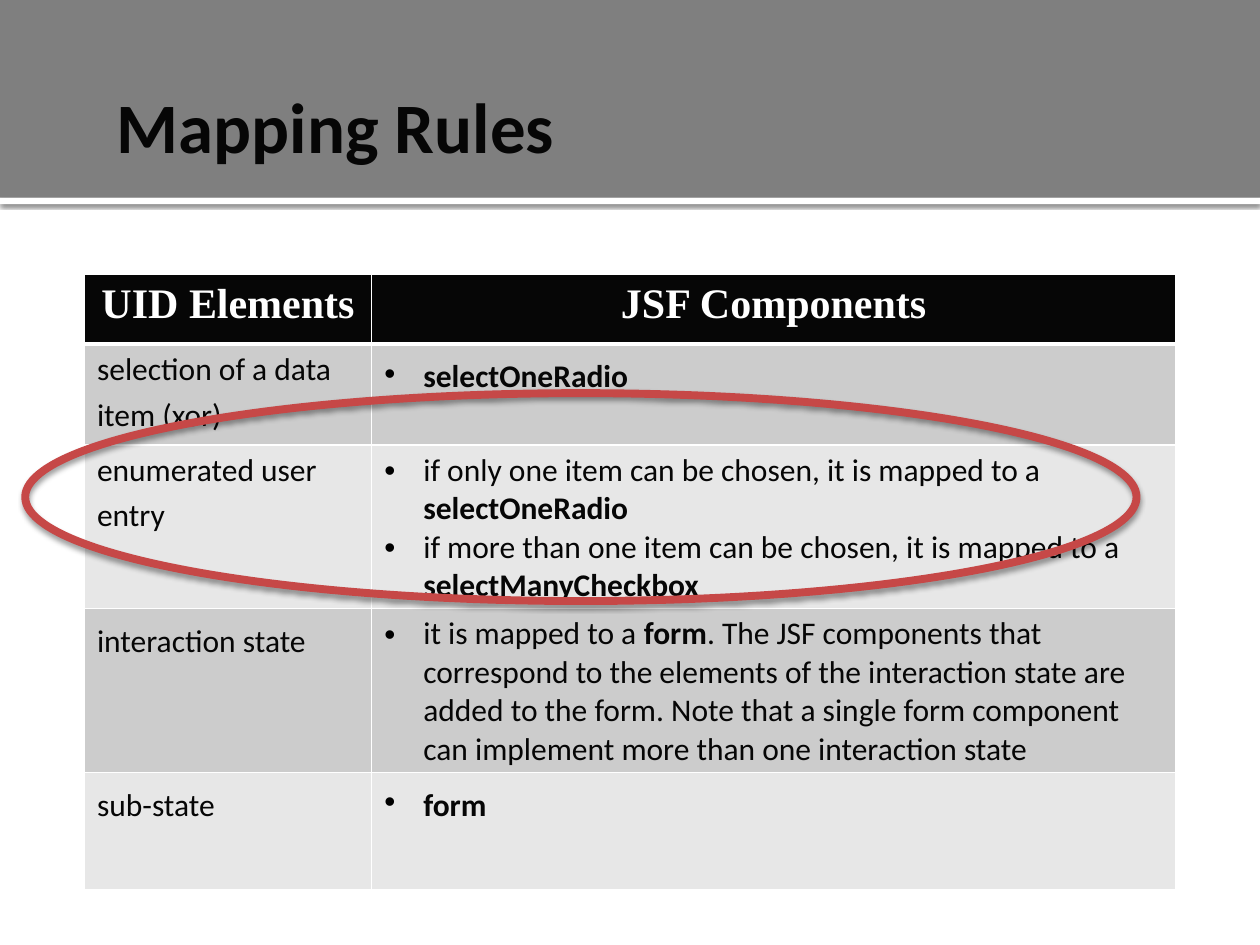
from lxml import etree
from pptx import Presentation, util as u
from pptx.dml.color import RGBColor
from pptx.enum import shapes, text
from pptx.oxml import parse_xml
from pptx.oxml.ns import nsdecls, qn

INK = RGBColor(0x06, 0x06, 0x06)
WHITE = RGBColor(0xFF, 0xFF, 0xFF)
BAND = RGBColor(0x7F, 0x7F, 0x7F)
RED = RGBColor(0xC6, 0x48, 0x47)
ROW_FILLS = [RGBColor(0xCC, 0xCC, 0xCC), RGBColor(0xE7, 0xE7, 0xE7)]

BODY = dict(name="Calibri", size=u.Pt(18), bold=False)
STRONG = BODY | dict(bold=True)
HEADING = dict(name="Times New Roman", size=u.Pt(24), bold=True)
TAIL = HEADING | dict(bold=False)
TITLE = dict(name="Calibri", size=u.Pt(40.5), bold=True)


def add_span(para, words, style, color=INK):
    span = para.add_run()
    span.text = words
    for key, value in style.items():
        setattr(span.font, key, value)
    span.font.color.rgb = color


def add_shadow(shape, alpha, blur, distance):
    shape.shadow.inherit = False
    effects = shape._element.spPr.find(qn("a:effectLst"))
    effects.append(parse_xml(
        f'<a:outerShdw {nsdecls("a")} blurRad="{u.Pt(blur)}" dist="{u.Pt(distance)}" '
        f'dir="5400000" rotWithShape="0"><a:srgbClr val="000000">'
        f'<a:alpha val="{alpha * 1000}"/></a:srgbClr></a:outerShdw>'))


deck = Presentation()
deck.slide_width, deck.slide_height = u.Inches(10), u.Inches(7.5)
page = deck.slides.add_slide(deck.slide_layouts[6])

# Title band with a white rule below it
for top, height, color in [(1.57, 0.05, WHITE), (0, 1.57, BAND)]:
    bar = page.shapes.add_shape(shapes.MSO_SHAPE.RECTANGLE, 0, u.Inches(top),
                                u.Inches(10), u.Inches(height))
    bar.fill.solid()
    bar.fill.fore_color.rgb = color
    bar.line.fill.background()
    bar.shadow.inherit = False
    if color == WHITE:
        add_shadow(bar, 60, 2.5, 0.8)

# Title
box = page.shapes.add_textbox(u.Inches(0.83), u.Inches(0.58), u.Inches(8.83), u.Inches(0.83))
frame = box.text_frame
frame.word_wrap = True
frame.vertical_anchor = text.MSO_ANCHOR.MIDDLE
frame.margin_right = u.Inches(0.05)
add_span(frame.paragraphs[0], "Mapping Rules", TITLE)

# Table content: each cell is a list of paragraphs, each paragraph a list of spans
SPACE = (" ", TAIL)
rows = [
    [[[("UID Elements", HEADING)]], [[("JSF Components", HEADING)]]],
    [[[("selection of a data item (xor)", BODY), SPACE]],
     [[("selectOneRadio", STRONG), SPACE]]],
    [[[("enumerated user entry", BODY), SPACE]],
     [[("if only one item can be chosen, it is mapped to a ", BODY), ("selectOneRadio", STRONG)],
      [("if more than one item can be chosen, it is mapped to a ", BODY),
       ("selectManyCheckbox", STRONG)]]],
    [[[("interaction state", BODY), SPACE]],
     [[("it is mapped to a ", BODY), ("form", STRONG),
       (". The JSF components that correspond to the elements of the interaction state "
        "are added to the form. Note that a single form component can implement more "
        "than one interaction state", BODY)]]],
    [[[("sub-state", BODY), SPACE]], [[("form", STRONG), SPACE]]],
]

# Table
table = page.shapes.add_table(5, 2, u.Inches(0.67), u.Inches(2.18),
                              u.Inches(8.66), u.Inches(3.99)).table
for column, width in zip(table.columns, [2.28, 6.38]):
    column.width = u.Inches(width)
for row, height in zip(table.rows, [0.55, 0.65, 0.93, 0.93, 0.93]):
    row.height = u.Inches(height)

for r, cells in enumerate(rows):
    for c, paragraphs in enumerate(cells):
        cell = table.cell(r, c)
        header = r == 0
        # White borders, thicker under the header
        for side in "LRTB":
            thick = (r, side) in [(0, "B"), (1, "T")]
            cell._tc.get_or_add_tcPr().append(parse_xml(
                f'<a:ln{side} {nsdecls("a")} w="{u.Pt(3 if thick else 1)}"><a:solidFill>'
                f'<a:srgbClr val="{WHITE}"/></a:solidFill></a:ln{side}>'))
        cell.fill.solid()
        cell.fill.fore_color.rgb = INK if header else ROW_FILLS[(r - 1) % 2]

        for i, spans in enumerate(paragraphs):
            para = cell.text_frame.paragraphs[0] if i == 0 else cell.text_frame.add_paragraph()
            for words, style in spans:
                add_span(para, words, style, WHITE if header else INK)
            if header:
                para.alignment = text.PP_ALIGN.CENTER
            elif c == 1:
                props = para._p.get_or_add_pPr()
                props.set("marL", str(u.Inches(0.31)))
                props.set("indent", str(u.Inches(-0.31)))
                color = etree.SubElement(props, qn("a:buClr"))
                etree.SubElement(color, qn("a:srgbClr"), val="000000")
                etree.SubElement(props, qn("a:buFont"), typeface="Arial")
                etree.SubElement(props, qn("a:buChar"), char="•")

# Ellipse around the enumerated entry rule
ring = page.shapes.add_shape(shapes.MSO_SHAPE.OVAL, u.Inches(0.2), u.Inches(3.12),
                             u.Inches(8.82), u.Inches(1.65))
ring.fill.background()
ring.line.color.rgb = RED
ring.line.width = u.Pt(4.5)
add_shadow(ring, 38, 3.1, 2)

deck.save("out.pptx")
